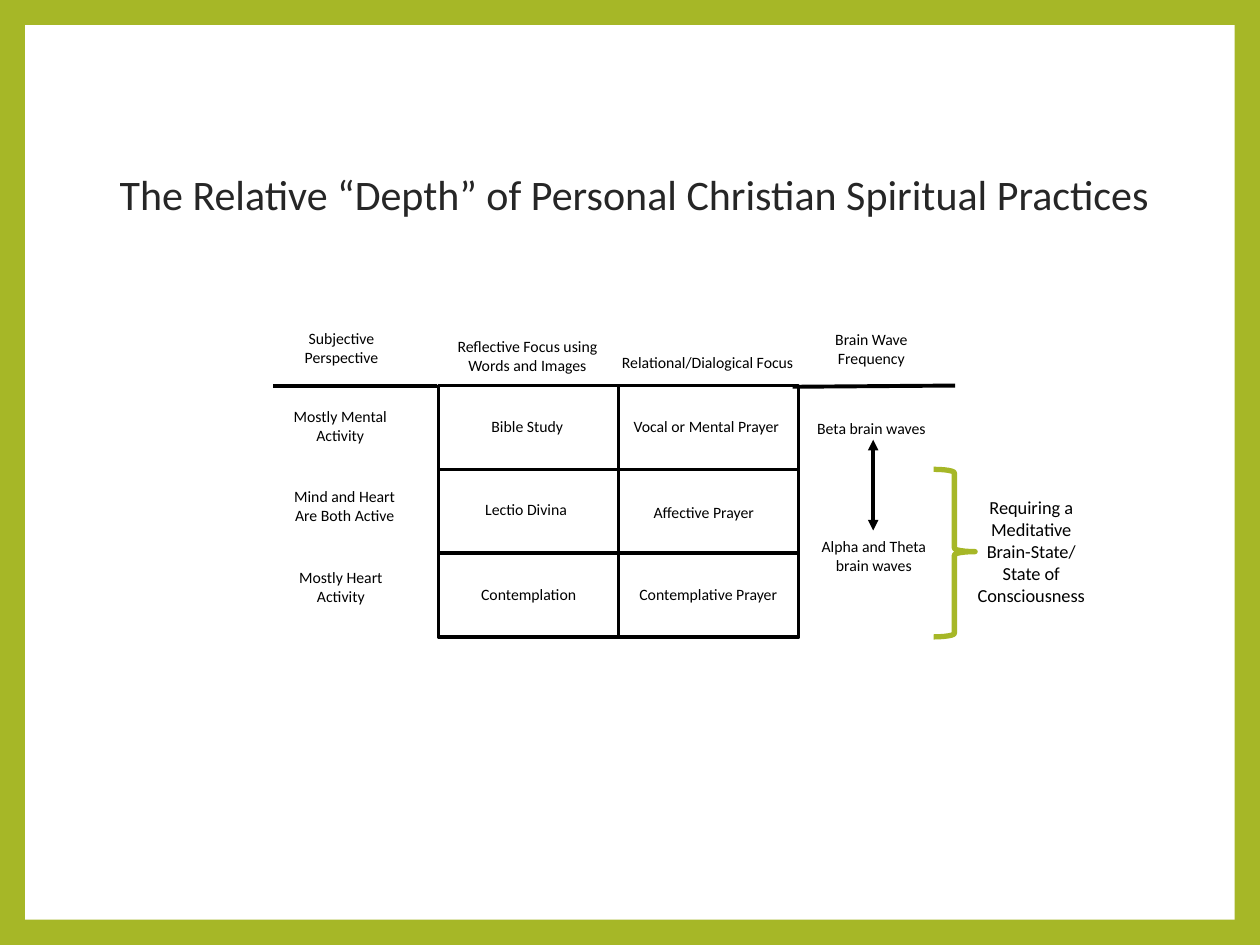
from dataclasses import dataclass
from itertools import product

from lxml.etree import SubElement
from pptx import Presentation
from pptx.dml.color import RGBColor
from pptx.enum.shapes import MSO_CONNECTOR, MSO_SHAPE
from pptx.enum.text import MSO_ANCHOR, PP_ALIGN
from pptx.oxml.ns import qn
from pptx.util import Inches, Pt

COLOURS = {
    "green": "A6B727",
    "white": "FFFFFF",
    "black": "000000",
    "title": "262626",
}
FONT = "Calibri"

# Grid of practices
GRID_LEFT, GRID_TOP = 3.48, 3.06
CELL_WIDTH, CELL_HEIGHT = 1.43, 0.665
COLUMNS, ROWS = 2, 3


@dataclass
class Label:
    text: str
    left: float
    top: float
    width: float
    height: float


@dataclass
class Rule:
    start: tuple[float, float]
    end: tuple[float, float]
    weight: float = 2.25
    arrows: bool = False


HEADINGS = [
    Label("Subjective Perspective", 2.28, 2.58, 0.86, 0.45),
    Label("Reflective Focus using Words and Images", 3.49, 2.64, 1.39, 0.36),
    Label("Relational/Dialogical Focus", 4.82, 2.77, 1.59, 0.21),
    Label("Brain Wave Frequency", 6.54, 2.59, 0.75, 0.45),
]
PERSPECTIVES = [
    Label("Mostly Mental Activity", 2.28, 3.2, 0.84, 0.4),
    Label("Mind and Heart Are Both Active", 2.25, 3.83, 0.97, 0.4),
    Label("Mostly Heart Activity", 2.25, 4.48, 0.91, 0.43),
]
PRACTICES = [
    Label("Bible Study", 3.63, 3.28, 1.11, 0.24),
    Label("Vocal or Mental Prayer", 4.99, 3.28, 1.23, 0.22),
    Label("Lectio Divina", 3.62, 3.94, 1.11, 0.24),
    Label("Affective Prayer", 5.03, 3.96, 1.11, 0.24),
    Label("Contemplation", 3.64, 4.61, 1.11, 0.24),
    Label("Contemplative Prayer", 5.01, 4.61, 1.22, 0.24),
]
BRAIN_WAVES = [
    Label("Beta brain waves", 6.39, 3.29, 1.05, 0.22),
    Label("Alpha and Theta brain waves", 6.41, 4.23, 1.05, 0.5),
]
MEDITATIVE_NOTE = Label(
    "Requiring a Meditative Brain-State/ State of Consciousness", 7.7, 3.91, 0.97, 0.96
)
TITLE = Label(
    "The Relative “Depth” of Personal Christian Spiritual Practices", 0.67, 1.19, 8.73, 0.69
)
RULES = [
    Rule((2.17, 3.06), (3.47, 3.06)),
    Rule((6.29, 3.07), (7.58, 3.06)),
    Rule((6.93, 3.49), (6.93, 4.21), weight=2, arrows=True),
]


def colour(name: str) -> RGBColor:
    return RGBColor.from_string(COLOURS[name])


def add_label(page, label: Label, *, size: float = 9, ink: str = "black",
              anchor=MSO_ANCHOR.TOP, inset: tuple[float, float] = (0.03, 0.03)) -> None:
    box = page.shapes.add_textbox(
        Inches(label.left), Inches(label.top), Inches(label.width), Inches(label.height))
    frame = box.text_frame
    frame.word_wrap = True
    frame.vertical_anchor = anchor
    frame.margin_left = frame.margin_right = Inches(inset[0])
    frame.margin_top = frame.margin_bottom = Inches(inset[1])
    para = frame.paragraphs[0]
    para.alignment = PP_ALIGN.CENTER
    span = para.add_run()
    span.text = label.text
    span.font.name = FONT
    span.font.size = Pt(size)
    span.font.color.rgb = colour(ink)


def add_block(page, kind, left: float, top: float, width: float, height: float, *,
              fill: str | None = None, line: str | None = None, weight: float = 2):
    shape = page.shapes.add_shape(
        kind, Inches(left), Inches(top), Inches(width), Inches(height))
    shape.shadow.inherit = False
    if fill:
        shape.fill.solid()
        shape.fill.fore_color.rgb = colour(fill)
    else:
        shape.fill.background()
    if line:
        shape.line.color.rgb = colour(line)
        shape.line.width = Pt(weight)
    else:
        shape.line.fill.background()
    return shape


def add_rule(page, rule: Rule) -> None:
    points = [Inches(value) for value in (*rule.start, *rule.end)]
    connector = page.shapes.add_connector(MSO_CONNECTOR.STRAIGHT, *points)
    connector.line.color.rgb = colour("black")
    connector.line.width = Pt(rule.weight)
    if rule.arrows:
        outline = connector.line._get_or_add_ln()
        for end in ("a:headEnd", "a:tailEnd"):
            SubElement(outline, qn(end), type="triangle")
    SubElement(connector._element.spPr, qn("a:effectLst"))


def main() -> None:
    deck = Presentation()
    deck.slide_width, deck.slide_height = Inches(10), Inches(7.5)
    page = deck.slides.add_slide(deck.slide_layouts[6])

    # Green border around a white panel
    page.background.fill.solid()
    page.background.fill.fore_color.rgb = colour("green")
    add_block(page, MSO_SHAPE.RECTANGLE, 0.2, 0.2, 9.6, 7.1, fill="white")

    # Practice cells
    for row, column in product(range(ROWS), range(COLUMNS)):
        add_block(page, MSO_SHAPE.RECTANGLE,
                  GRID_LEFT + column * CELL_WIDTH, GRID_TOP + row * CELL_HEIGHT,
                  CELL_WIDTH, CELL_HEIGHT, fill="white", line="black")

    # Heading rules and the brain wave arrow
    for rule in RULES:
        add_rule(page, rule)

    # Brace over the meditative rows
    brace = add_block(page, MSO_SHAPE.RIGHT_BRACE, 7.41, GRID_TOP + CELL_HEIGHT,
                      0.33, 2 * CELL_HEIGHT, line="green", weight=3)
    brace.adjustments[0] = 0.083
    brace.adjustments[1] = 0.491

    # Wording
    for label in HEADINGS + PERSPECTIVES + PRACTICES + BRAIN_WAVES:
        add_label(page, label)
    add_label(page, MEDITATIVE_NOTE, size=10.5)
    add_label(page, TITLE, size=24, ink="title", anchor=MSO_ANCHOR.MIDDLE, inset=(0.07, 0.04))

    deck.save("out.pptx")


if __name__ == "__main__":
    main()
